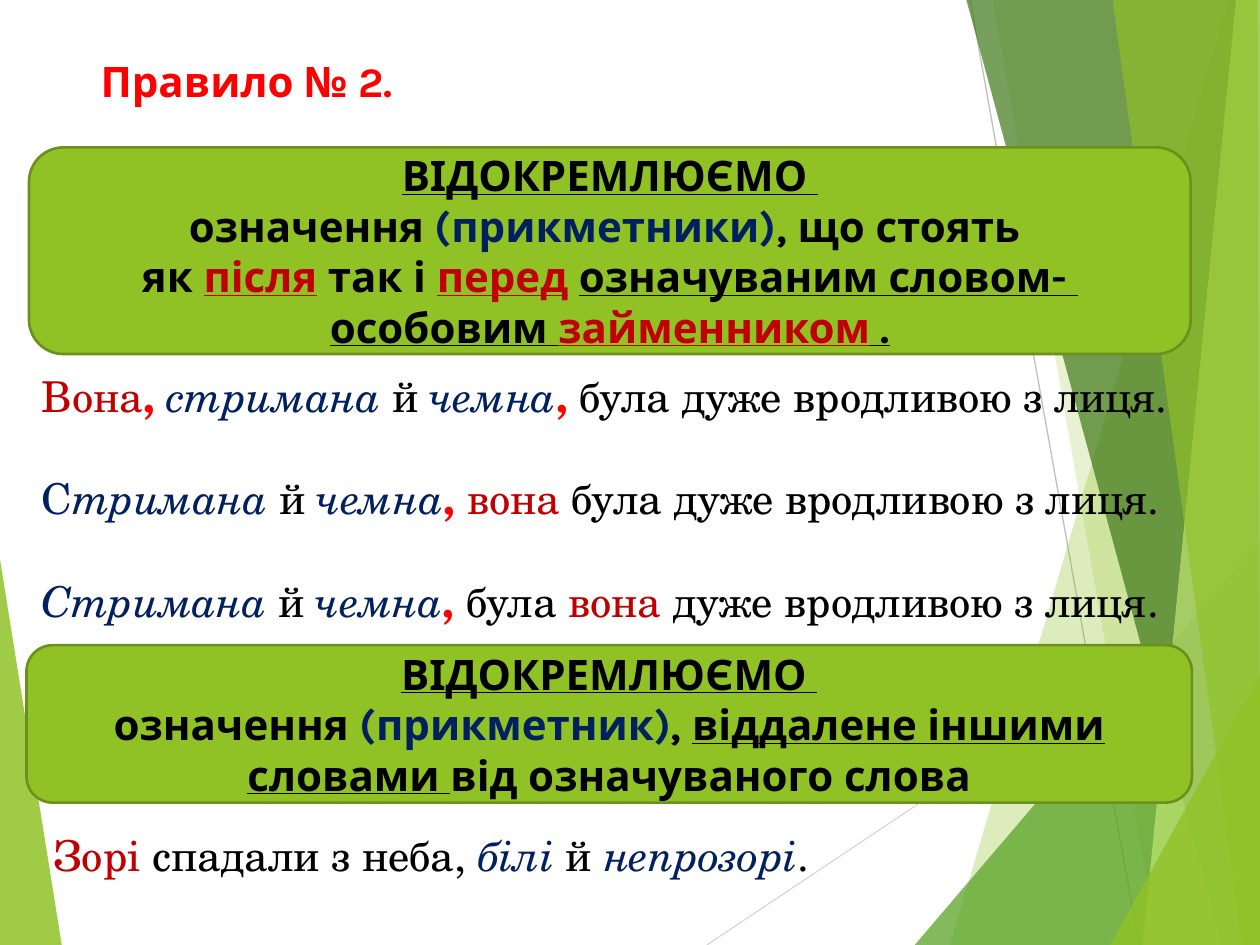
from lxml.etree import SubElement
from pptx import Presentation
from pptx.dml.color import RGBColor
from pptx.enum.shapes import MSO_CONNECTOR, MSO_SHAPE
from pptx.enum.text import MSO_ANCHOR, MSO_AUTO_SIZE, PP_ALIGN
from pptx.oxml.ns import qn
from pptx.util import Inches, Pt

LIME = RGBColor(0x90, 0xC2, 0x26)
GREEN = RGBColor(0x54, 0xA0, 0x21)
FOREST = RGBColor(0x3F, 0x78, 0x19)
PALE_LIME = RGBColor(0xC0, 0xE4, 0x74)
OLIVE = RGBColor(0x6B, 0x90, 0x1C)
LIGHT_GREY = RGBColor(0xD9, 0xD9, 0xD9)
GREY = RGBColor(0xBF, 0xBF, 0xBF)
BLACK = RGBColor(0, 0, 0)
RED = RGBColor(0xFF, 0, 0)
DARK_RED = RGBColor(0xC0, 0, 0)
NAVY = RGBColor(0, 0x20, 0x60)

RULE_FONT, EXAMPLE_FONT = "Karla", "TeX Gyre Schola"

# Run styles: colour, bold, italic, underline
HEADING = (RED, True, False, False)
RULE = (BLACK, True, False, False)
RULE_KEY = (BLACK, True, False, True)
RULE_TERM = (NAVY, True, False, False)
RULE_ACCENT = (DARK_RED, True, False, True)
PLAIN = (BLACK, False, False, False)
NOUN = (DARK_RED, False, False, False)
INITIAL = (NAVY, False, False, False)
ADJECTIVE = (NAVY, False, True, False)
COMMA = (RED, True, False, False)

# Corner points, colour, opacity in percent
FACETS = [
    ([(0, 4.44), (0.49, 7.5), (0, 7.5)], LIME, 85),
    ([(9.75, 0), (7.54, 7.5), (10, 7.5), (10, 0)], LIME, 30),
    ([(7.88, 0), (9.19, 7.5), (10, 7.5), (10, 0)], LIME, 20),
    ([(7.26, 7.5), (10, 4.29), (10, 7.5)], GREEN, 72),
    ([(7.67, 0), (9.7, 7.5), (10, 7.5), (10, 0)], FOREST, 70),
    ([(9.81, 0), (9.07, 7.5), (10, 7.5), (10, 0)], PALE_LIME, 70),
    ([(8.83, 0), (9.86, 7.5), (10, 7.5), (9.98, 0)], LIME, 65),
    ([(8.81, 7.5), (10, 5.35), (10, 7.5)], LIME, 80),
]

PRONOUN_RULE = [
    [("ВІДОКРЕМЛЮЄМО ", RULE_KEY)],
    [("означення ", RULE), ("(прикметники)", RULE_TERM), (", що стоять ", RULE)],
    [("як ", RULE), ("після", RULE_ACCENT), (" так і ", RULE),
     ("перед", RULE_ACCENT), (" ", RULE), ("означуваним словом- ", RULE_KEY)],
    [("особовим ", RULE_KEY), ("займенником", RULE_ACCENT), (" .", RULE_KEY)],
]
DISTANT_RULE = [
    [("ВІДОКРЕМЛЮЄМО ", RULE_KEY)],
    [("означення ", RULE), ("(прикметник)", RULE_TERM), (", ", RULE),
     ("віддалене іншими словами ", RULE_KEY), ("від означуваного слова", RULE)],
]
EXAMPLES = [
    [("Вона", NOUN), (", ", COMMA), ("стримана", ADJECTIVE), (" й ", PLAIN),
     ("чемна", ADJECTIVE), (",", COMMA), (" була дуже вродливою з лиця.", PLAIN)],
    [("С", INITIAL), ("тримана", ADJECTIVE), (" й ", PLAIN), ("чемна", ADJECTIVE),
     (",", COMMA), (" вона", NOUN), (" була дуже вродливою з лиця.", PLAIN)],
    [("Стримана", ADJECTIVE), (" й ", PLAIN), ("чемна", ADJECTIVE), (",", COMMA),
     (" була ", PLAIN), ("вона ", NOUN), ("дуже вродливою з лиця.", PLAIN)],
    [(" ", PLAIN), ("Зорі ", NOUN), ("спадали з неба, ", PLAIN), ("білі ", ADJECTIVE),
     ("й ", PLAIN), ("непрозорі", ADJECTIVE), (".", PLAIN)],
]
EXAMPLE_GAPS = [0, 29.2, 29.2, 116.5]  # points before each sentence


def add_facet(slide, corners, color, opacity):
    points = [(Inches(x), Inches(y)) for x, y in corners]
    builder = slide.shapes.build_freeform(*points[0])
    builder.add_line_segments(points[1:], close=True)
    facet = builder.convert_to_shape()
    facet.shadow.inherit = False
    facet.fill.solid()
    facet.fill.fore_color.rgb = color
    facet.line.fill.background()
    srgb = facet.fill._xPr.find(".//" + qn("a:srgbClr"))
    SubElement(srgb, qn("a:alpha")).set("val", str(opacity * 1000))


def add_ray(slide, start, end, color):
    ray = slide.shapes.add_connector(
        MSO_CONNECTOR.STRAIGHT, *(Inches(v) for v in start + end))
    ray.line.color.rgb = color
    ray.line.width = Pt(0.75)
    SubElement(ray._element.spPr, qn("a:effectLst"))


def write(frame, paragraphs, font_name, size, align=PP_ALIGN.LEFT, gaps=None):
    """Fill the frame with paragraphs made of (text, style) runs."""
    for index, runs in enumerate(paragraphs):
        paragraph = frame.add_paragraph() if index else frame.paragraphs[0]
        paragraph.alignment = align
        if gaps:
            paragraph.space_before = Pt(gaps[index])
        for text, (color, bold, italic, underline) in runs:
            run = paragraph.add_run()
            run.text = text
            font = run.font
            font.name, font.size = font_name, Pt(size)
            font.bold, font.italic, font.underline = bold, italic, underline
            font.color.rgb = color


def add_rule(slide, left, top, width, height, paragraphs):
    card = slide.shapes.add_shape(
        MSO_SHAPE.ROUNDED_RECTANGLE,
        Inches(left), Inches(top), Inches(width), Inches(height))
    card.shadow.inherit = False
    card.fill.solid()
    card.fill.fore_color.rgb = LIME
    card.line.color.rgb = OLIVE
    card.line.width = Pt(1.5)
    card.text_frame.word_wrap = True
    card.text_frame.vertical_anchor = MSO_ANCHOR.MIDDLE
    write(card.text_frame, paragraphs, RULE_FONT, 24, PP_ALIGN.CENTER)


def add_text(slide, left, top, width, height):
    box = slide.shapes.add_textbox(
        Inches(left), Inches(top), Inches(width), Inches(height))
    return box.text_frame


def main():
    prs = Presentation()
    prs.slide_width, prs.slide_height = Inches(10), Inches(7.5)
    slide = prs.slides.add_slide(prs.slide_layouts[6])

    left_facet, *right_facets = FACETS
    add_facet(slide, *left_facet)
    add_ray(slide, (5.61, 7.5), (10, 4.57), LIGHT_GREY)
    add_ray(slide, (7.7, 0), (9.04, 7.5), GREY)
    for facet in right_facets:
        add_facet(slide, *facet)

    examples = add_text(slide, 0.23, 2.89, 9.45, 4.45)
    examples.word_wrap = True
    write(examples, EXAMPLES, EXAMPLE_FONT, 24.3, gaps=EXAMPLE_GAPS)

    heading = add_text(slide, 0.7, 0.39, 2.53, 0.5)
    heading.word_wrap = False
    heading.auto_size = MSO_AUTO_SIZE.SHAPE_TO_FIT_TEXT
    write(heading, [[("Правило № 2.", HEADING)]], RULE_FONT, 24)

    add_rule(slide, 0.23, 1.17, 9.22, 1.64, PRONOUN_RULE)
    add_rule(slide, 0.21, 5.12, 9.25, 1.25, DISTANT_RULE)
    prs.save("out.pptx")


if __name__ == "__main__":
    main()
